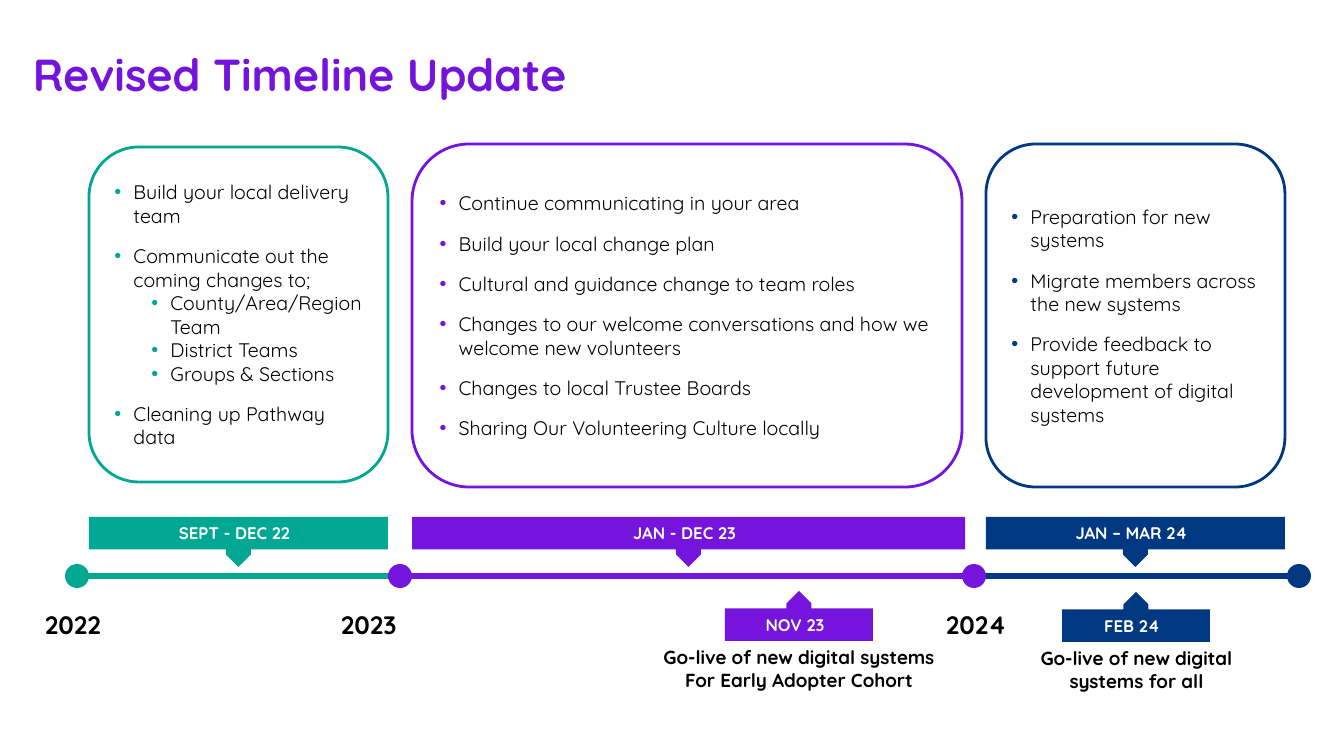
from pptx import Presentation
from pptx.dml.color import RGBColor
from pptx.enum.shapes import MSO_CONNECTOR, MSO_SHAPE
from pptx.enum.text import MSO_ANCHOR, PP_ALIGN
from pptx.oxml.ns import qn
from pptx.util import Pt
from lxml import etree

STRAIGHT = MSO_CONNECTOR.STRAIGHT
ROUNDED = MSO_SHAPE.ROUNDED_RECTANGLE
DOT = MSO_SHAPE.FLOWCHART_CONNECTOR
DOWN_CALLOUT = MSO_SHAPE.DOWN_ARROW_CALLOUT
UP_CALLOUT = MSO_SHAPE.UP_ARROW_CALLOUT
MIDDLE, TOP = MSO_ANCHOR.MIDDLE, MSO_ANCHOR.TOP
CENTER, LEFT = PP_ALIGN.CENTER, PP_ALIGN.LEFT

TITLE = "Revised Timeline Update"
PHASES = [
    {"period": "SEPT - DEC 22", "color": "teal", "left": 89, "width": 299,
     "panel": (147, 299, 335),
     "tasks": [
         (0, "Build your local delivery team"),
         (0, "Communicate out the coming changes to;"),
         (1, "County/Area/Region Team"),
         (1, "District Teams"),
         (1, "Groups & Sections"),
         (0, "Cleaning up Pathway data"),
     ]},
    {"period": "JAN - DEC 23", "color": "purple", "left": 412, "width": 553,
     "panel": (144, 550, 343),
     "tasks": [
         (0, "Continue communicating in your area"),
         (0, "Build your local change plan"),
         (0, "Cultural and guidance change to team roles"),
         (0, "Changes to our welcome conversations and how we welcome new volunteers"),
         (0, "Changes to local Trustee Boards"),
         (0, "Sharing Our Volunteering Culture locally"),
     ]},
    {"period": "JAN – MAR 24", "color": "navy", "left": 986, "width": 299,
     "panel": (144, 299, 343),
     "tasks": [
         (0, "Preparation for new systems"),
         (0, "Migrate members across the new systems"),
         (0, "Provide feedback to support future development of digital systems"),
     ]},
]
STOPS = [(77, "teal"), (400, "purple"), (974, "purple"), (1299, "navy")]
YEARS = [("2022", 35), ("2023", 331), ("2024", 936)]
MILESTONES = [
    {"month": "NOV 23", "color": "purple", "center": 799, "top": 591, "width": 302,
     "caption": ["Go-live of new digital systems", "For Early Adopter Cohort"]},
    {"month": "FEB 24", "color": "navy", "center": 1136, "top": 592, "width": 245,
     "caption": ["Go-live of new digital systems for all"]},
]

THEME = {
    "font": "Quicksand",
    "colors": {"teal": "00A793", "purple": "7414DC", "navy": "003982",
               "title": "7413DC", "text": "000000", "inverse": "FFFFFF"},
    "title": {"size": Pt(32), "bold": True},
    "year": {"size": Pt(18), "bold": True},
    "task": {"size": Pt(14), "bold": False},
    "caption": {"size": Pt(13.5), "bold": True},
    "banner": {"size": Pt(12), "bold": True},
}
PX = 914400 / 100.8
AXIS_Y = 576
DOT_SIZE = 24
BANNER_TOP, BANNER_HEIGHT = 517, 50
MILESTONE_WIDTH = 148
TASK_INDENT, TASK_STEP = 20, 37


def px(*lengths):
    return [round(length * PX) for length in lengths]


def color(name):
    return RGBColor.from_string(THEME["colors"][name])


def apply(target, values):
    for name, value in values.items():
        setattr(target, name, value)


def write(paragraph, text, style, ink="text"):
    run = paragraph.add_run()
    run.text = text
    apply(run.font, {"name": THEME["font"], **THEME[style]})
    run.font.color.rgb = color(ink)


def add_label(slide, box, lines, style, ink="text", align=LEFT, spacing=None):
    frame = slide.shapes.add_textbox(*px(*box)).text_frame
    apply(frame, {"word_wrap": True, "vertical_anchor": TOP})
    for index, line in enumerate(lines):
        paragraph = frame.add_paragraph() if index else frame.paragraphs[0]
        apply(paragraph, {"alignment": align, "line_spacing": spacing})
        write(paragraph, line, style, ink)


def add_solid(slide, kind, box, fill):
    shape = slide.shapes.add_shape(kind, *px(*box))
    shape.shadow.inherit = False
    shape.fill.solid()
    shape.fill.fore_color.rgb = color(fill)
    shape.line.fill.background()
    return shape


def add_callout(slide, kind, box, text, fill):
    callout = add_solid(slide, kind, box, fill)
    for index, value in enumerate((0.5, 0.25, 0.25, 0.65)):
        callout.adjustments[index] = value
    frame = callout.text_frame
    apply(frame, {"margin_left": 0, "margin_top": 0, "margin_bottom": 0,
                  "margin_right": px(8)[0], "vertical_anchor": MIDDLE, "word_wrap": True})
    frame.paragraphs[0].alignment = CENTER
    write(frame.paragraphs[0], text, "banner", "inverse")


def add_bullet(paragraph, level, ink):
    properties = paragraph._p.get_or_add_pPr()
    properties.set("marL", str(px(TASK_INDENT + level * TASK_STEP)[0]))
    properties.set("indent", str(px(-19)[0]))
    tint = etree.SubElement(properties, qn("a:buClr"))
    etree.SubElement(tint, qn("a:srgbClr"), val=THEME["colors"][ink])
    etree.SubElement(properties, qn("a:buFont"), typeface="Arial")
    etree.SubElement(properties, qn("a:buChar"), char="•")


def add_panel(slide, phase):
    top, width, height = phase["panel"]
    panel = slide.shapes.add_shape(ROUNDED, *px(phase["left"], top, width, height))
    panel.shadow.inherit = False
    panel.fill.background()
    panel.line.color.rgb = color(phase["color"])
    panel.line.width = Pt(2)
    frame = panel.text_frame
    apply(frame, {"word_wrap": True, "vertical_anchor": MIDDLE})
    for index, (level, task) in enumerate(phase["tasks"]):
        paragraph = frame.add_paragraph() if index else frame.paragraphs[0]
        add_bullet(paragraph, level, phase["color"])
        gap = Pt(12) if index and level == 0 else Pt(0)
        apply(paragraph, {"alignment": LEFT, "level": level, "space_before": gap})
        write(paragraph, task, "task")


def add_axis(slide):
    for (start, _), (end, _), phase in zip(STOPS, STOPS[1:], PHASES):
        segment = slide.shapes.add_connector(STRAIGHT, *px(start, AXIS_Y, end, AXIS_Y))
        segment.line.color.rgb = color(phase["color"])
        segment.line.width = Pt(4.5)
        etree.SubElement(segment._element.spPr, qn("a:effectLst"))
    for center, fill in STOPS:
        corner = (center - DOT_SIZE // 2, AXIS_Y - DOT_SIZE // 2)
        add_solid(slide, DOT, (*corner, DOT_SIZE, DOT_SIZE), fill)


def main():
    deck = Presentation()
    deck.slide_width, deck.slide_height = px(1344, 756)
    slide = deck.slides.add_slide(deck.slide_layouts[6])

    add_label(slide, (23, 42, 665, 64), [TITLE], "title", "title")
    add_axis(slide)
    for phase in PHASES:
        add_panel(slide, phase)
        banner = (phase["left"], BANNER_TOP, phase["width"], BANNER_HEIGHT)
        add_callout(slide, DOWN_CALLOUT, banner, phase["period"], phase["color"])
    for year, left in YEARS:
        add_label(slide, (left, 589, 84, 52), [year], "year", spacing=1.5)
    for event in MILESTONES:
        center, top, width = event["center"], event["top"], event["width"]
        flag = (center - MILESTONE_WIDTH // 2, top, MILESTONE_WIDTH, BANNER_HEIGHT)
        add_callout(slide, UP_CALLOUT, flag, event["month"], event["color"])
        caption = (center - width // 2, top + BANNER_HEIGHT, width, 56)
        add_label(slide, caption, event["caption"], "caption", align=CENTER)

    deck.save("out.pptx")


if __name__ == "__main__":
    main()
